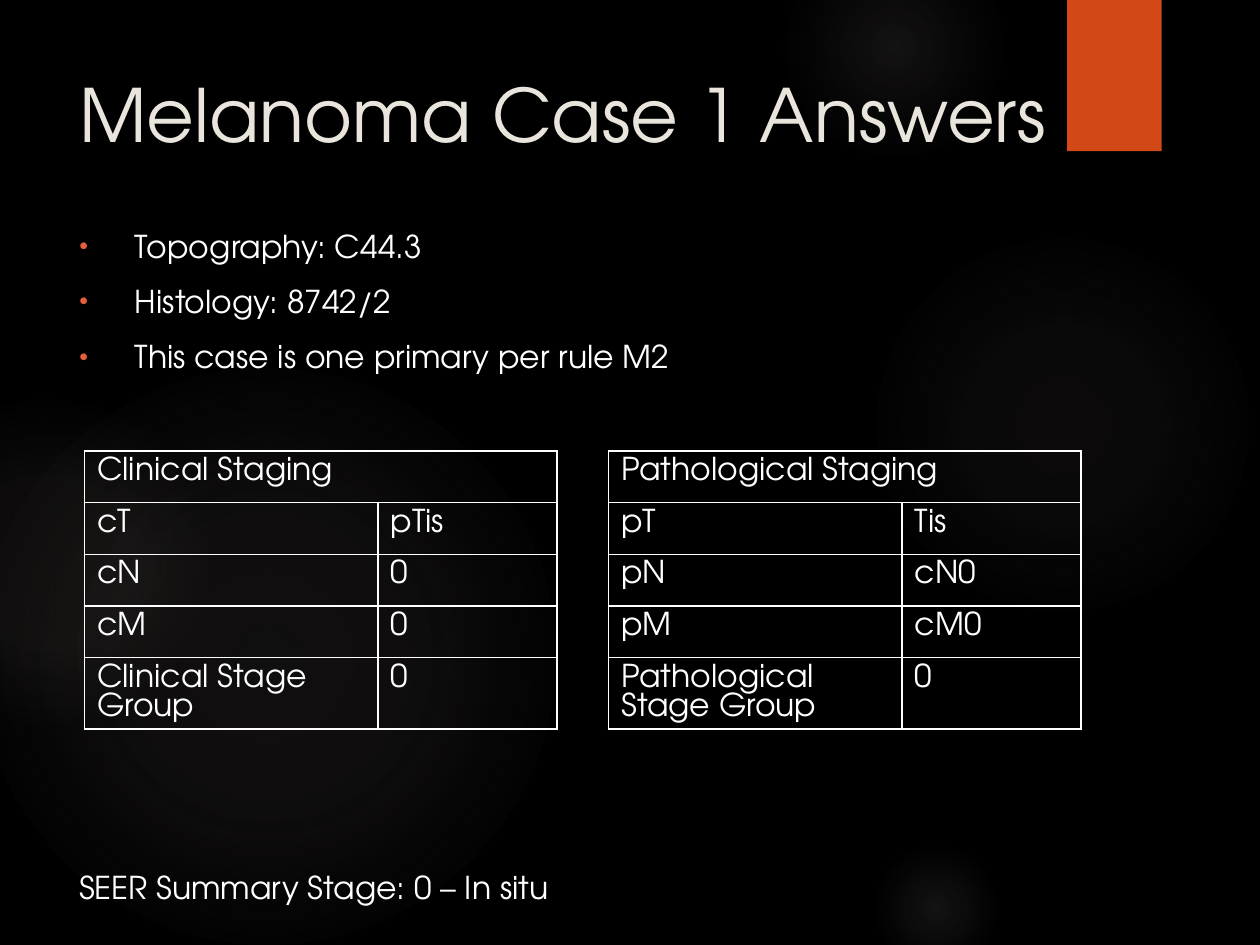
from lxml.etree import SubElement
from pptx import Presentation
from pptx.dml.color import RGBColor
from pptx.enum.shapes import MSO_SHAPE
from pptx.enum.text import MSO_ANCHOR, MSO_AUTO_SIZE, PP_ALIGN
from pptx.oxml import parse_xml
from pptx.oxml.ns import nsdecls, qn
from pptx.util import Inches, Pt

FONT = "TeX Gyre Adventor"
WHITE, CREAM, ORANGE, CORAL = "FFFFFF", "E9E5DC", "D34817", "E45F3C"
GLOW = "918485"

# Left, top, size, then the opacity of the core and ring, and the end of the fade
GLOWS = [
    (6.89, 1.83, 3.08, 7, 6, 69),
    (6.22, -0.5, 1.75, 14, 7, 73),
    (6.89, 6.67, 1.08, 14, 7, 66),
    (-0.17, 2.92, 4.58, 11, 10, 75),
    (-0.92, 3.17, 2.58, 8, 8, 72),
]
FACTS = ["Topography: C44.3", "Histology: 8742/2",
         "This case is one primary per rule M2"]
STAGES = [
    (0.67, "Clinical Staging", [("cT", "pTis"), ("cN", "0"), ("cM", "0"),
                                ("Clinical Stage Group", "0")]),
    (4.83, "Pathological Staging", [("pT", "Tis"), ("pN", "cN0"), ("pM", "cM0"),
                                    ("Pathological Stage Group", "0")]),
]


def paint(color, value):
    color.rgb = RGBColor.from_string(value)


def place(shape, *box):
    for name, value in zip(("left", "top", "width", "height"), box):
        setattr(shape, name, Inches(value))


def write(para, text, size=18, color=WHITE, **form):
    run = para.add_run()
    run.text = text
    for name, value in {"name": FONT, "size": Pt(size)}.items():
        setattr(run.font, name, value)
    paint(run.font.color, color)
    for name, value in {"alignment": PP_ALIGN.LEFT, **form}.items():
        setattr(para, name, value)


def add_shape(slide, kind, *box):
    shape = slide.shapes.add_shape(kind, *map(Inches, box))
    shape.shadow.inherit = False
    shape.line.fill.background()
    return shape


def add_glow(slide, left, top, size, core, ring, end):
    shape = add_shape(slide, MSO_SHAPE.OVAL, left, top, size, size)
    stops = "".join(
        f'<a:gs pos="{pos * 1000}"><a:srgbClr val="{GLOW}">'
        f'<a:alpha val="{alpha * 1000}"/></a:srgbClr></a:gs>'
        for pos, alpha in ((0, core), (36, ring), (end, 0)))
    fill = parse_xml(
        f'<a:gradFill {nsdecls("a")} rotWithShape="1"><a:gsLst>{stops}</a:gsLst>'
        '<a:path path="circle"><a:fillToRect l="50000" t="50000" r="50000" b="50000"/>'
        '</a:path></a:gradFill>')
    shape._element.spPr.find(qn("a:prstGeom")).addnext(fill)


def add_tab(slide):
    shape = add_shape(slide, MSO_SHAPE.RECTANGLE, 8.47, 0, 0.75, 1.2)
    shape.fill.solid()
    paint(shape.fill.fore_color, ORANGE)
    shape._element.spPr.find(qn("a:effectLst")).append(parse_xml(
        f'<a:outerShdw {nsdecls("a")} blurRad="{Pt(3)}" dist="{Pt(2)}" dir="5400000">'
        '<a:srgbClr val="000000"><a:alpha val="45000"/></a:srgbClr></a:outerShdw>'))


def add_bullet(para):
    props = para._p.get_or_add_pPr()
    props.set("marL", str(Inches(0.44)))
    props.set("indent", str(Inches(-0.44)))
    color = SubElement(props, qn("a:buClr"))
    SubElement(color, qn("a:srgbClr"), val=CORAL)
    SubElement(props, qn("a:buSzPct"), val="79000")
    SubElement(props, qn("a:buFont"), typeface="Arial")
    SubElement(props, qn("a:buChar"), char="•")


def add_edges(cell):
    props = cell._tc.get_or_add_tcPr()
    for spot, side in enumerate(("lnL", "lnR", "lnT", "lnB")):
        props.insert(spot, parse_xml(
            f'<a:{side} {nsdecls("a")} w="{Pt(1)}"><a:solidFill>'
            f'<a:srgbClr val="{WHITE}"/></a:solidFill></a:{side}>'))


def add_stage(slide, left, head, pairs):
    rows = [(head, ""), *pairs]
    table = slide.shapes.add_table(
        len(rows), 2, *map(Inches, (left, 3.58, 3.75, 2.05))).table
    table.first_row = table.horz_banding = False
    for col, width in zip(table.columns, (2.33, 1.42)):
        col.width = Inches(width)
    table.cell(0, 0).merge(table.cell(0, 1))
    for line, texts in zip(table.rows, rows):
        line.height = Inches(0.41)
        for cell, text in zip(line.cells, texts):
            cell.fill.background()
            add_edges(cell)
            if text:
                write(cell.text_frame.paragraphs[0], text)


def add_title(slide):
    title = slide.shapes.title
    place(title, 0.53, 0.5, 7.89, 1.53)
    frame = title.text_frame
    frame.vertical_anchor = MSO_ANCHOR.TOP
    frame.auto_size = MSO_AUTO_SIZE.NONE
    write(frame.paragraphs[0], "Melanoma Case 1 Answers", 42, CREAM)
    slide.shapes._spTree.append(title._element)


def add_facts(slide):
    body = slide.placeholders[1]
    place(body, 0.53, 1.75, 8.89, 1.5)
    frame = body.text_frame
    frame.auto_size = MSO_AUTO_SIZE.NONE
    for spot, fact in enumerate(FACTS):
        para = frame.add_paragraph() if spot else frame.paragraphs[0]
        write(para, fact, level=1, space_before=Pt(10))
        add_bullet(para)
    slide.shapes._spTree.append(body._element)


def add_note(slide):
    frame = slide.shapes.add_textbox(
        *map(Inches, (0.53, 6.84, 7.33, 0.4))).text_frame
    frame.word_wrap = True
    frame.auto_size = MSO_AUTO_SIZE.SHAPE_TO_FIT_TEXT
    write(frame.paragraphs[0], "SEER Summary Stage: 0 – In situ")


def main():
    deck = Presentation()
    deck.slide_width, deck.slide_height = Inches(10), Inches(7.5)
    slide = deck.slides.add_slide(deck.slide_layouts[1])
    # Backdrop
    slide.background.fill.solid()
    paint(slide.background.fill.fore_color, "000000")
    for glow in GLOWS:
        add_glow(slide, *glow)
    add_tab(slide)
    # Content
    add_title(slide)
    add_facts(slide)
    for stage in STAGES:
        add_stage(slide, *stage)
    add_note(slide)
    deck.save("out.pptx")


if __name__ == "__main__":
    main()
